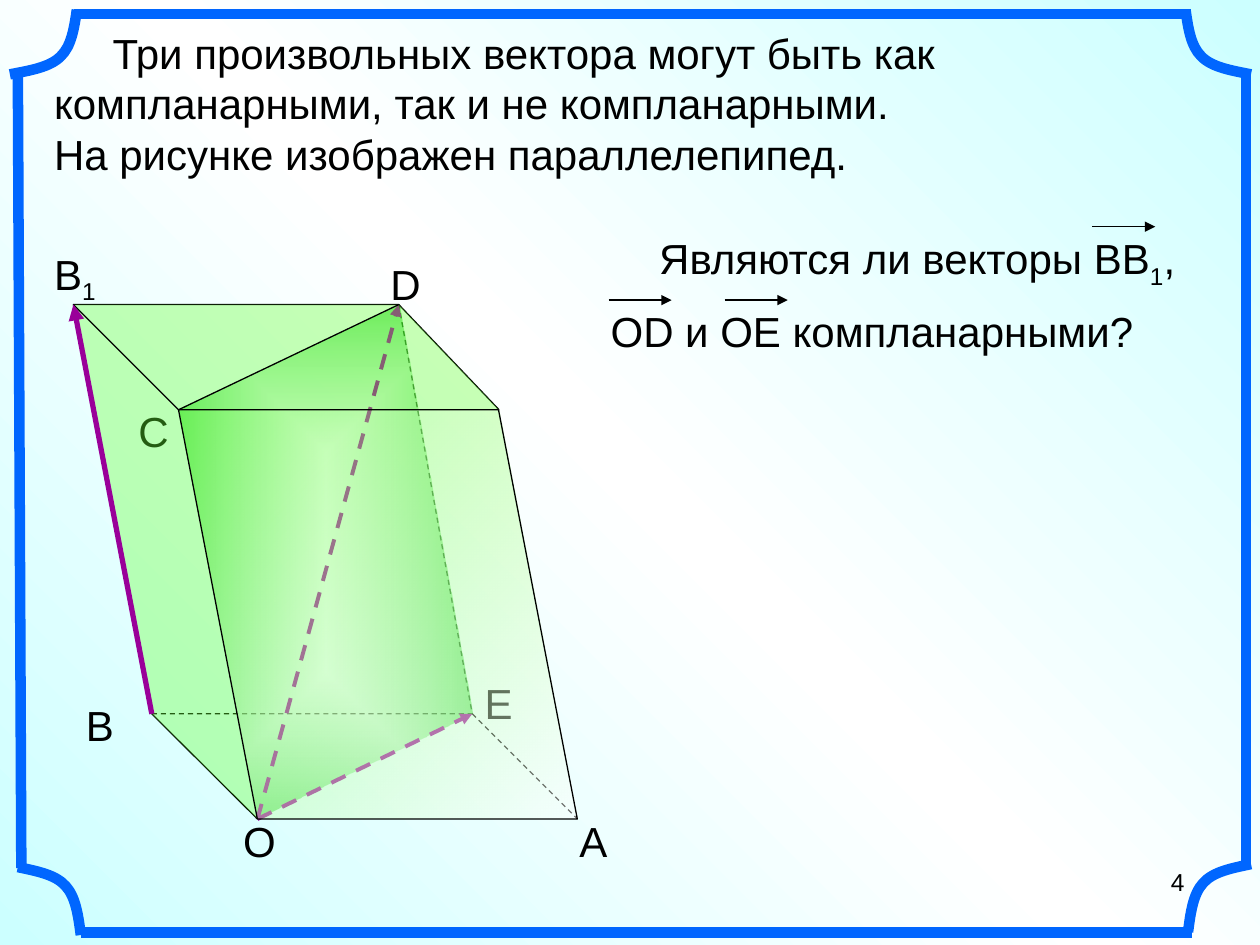
import pptx
import pptx.dml.color
import pptx.enum.dml
import pptx.enum.shapes
import pptx.enum.text
import pptx.oxml
import pptx.oxml.ns
import pptx.util
from pptx.util import Cm

RGBColor = pptx.dml.color.RGBColor
BLACK = RGBColor(0x00, 0x00, 0x00)
BLUE = RGBColor(0x00, 0x66, 0xFF)
PURPLE = RGBColor(0x99, 0x00, 0x99)
WHITE = RGBColor(0xFF, 0xFF, 0xFF)
CYAN = RGBColor(0xCC, 0xFF, 0xFF)
GREEN = RGBColor(0x00, 0xCC, 0x00)
LIME = RGBColor(0x66, 0xFF, 0x33)

FONT = {"name": "Arial", "size": pptx.util.Pt(24)}
SMALL_FONT = {"name": "Arial", "size": pptx.util.Pt(14)}
DASH = {"dash_style": pptx.enum.dml.MSO_LINE.DASH}
EDGE = {"width": pptx.util.Pt(0.75)}
HIDDEN_EDGE = EDGE | DASH
VECTOR = {"width": pptx.util.Pt(3)}
HIDDEN_VECTOR = {"width": pptx.util.Pt(2.25)} | DASH
FRAME = {"width": pptx.util.Pt(6)}

# All positions are in centimetres.
VERTICES = {
    "O": (5.19, 16.51), "A": (11.64, 16.51), "B": (3.06, 14.39), "E": (9.52, 14.39),
    "C": (3.6, 8.26), "F": (10.06, 8.26), "B1": (1.48, 6.14), "D": (8.04, 6.14),
}
# Each paragraph: runs of (text, baseline), then its formatting.
INTRO = [
    ([("Три произвольных вектора могут быть как компланарными, "
       "так и не компланарными.", 0)], {"indent": 1.18}),
    ([("На рисунке изображен параллелепипед.", 0)], {}),
]
QUESTION = [
    ([("Являются ли векторы ВВ", 0), ("1", -25), (",", 0)], {"indent": 1.18}),
    ([("ОD и ОЕ компланарными?", 0)], {"indent": 0.2, "space_before": 9}),
]
VECTOR_SIGNS = [(22.02, 4.57), (12.27, 6.05), (14.61, 6.05)]
SIGN_LENGTH = 1.27

BACK_LABELS = [
    ([("А", 0)], 11.43, 16.31), ([("О", 0)], 4.65, 16.31), ([("Е", 0)], 9.52, 13.54),
    ([("D", 0)], 7.62, 5.08), ([("C", 0)], 2.54, 8.05),
]
FRONT_LABELS = [([("В", 0)], 1.48, 13.97), ([("B", 0), ("1", -25)], 0.84, 4.88)]

FRAME_SIDES = [
    ((1.5, 0.28), (24, 0.28)), ((1.63, 18.8), (24.03, 18.8)),
    ((25.12, 1.5), (25.12, 17.5)), ((0.36, 1.5), (0.43, 17.5)),
]
# Corner curves: start x, start y, signed width, signed height.
FRAME_CORNERS = [
    (0.36, 17.48, 1.27, 1.37), (25.22, 17.42, -1.27, 1.37),
    (25.22, 1.5, -1.32, -1.3), (0.2, 1.5, 1.35, -1.3),
]
CORNER_CURVE = [(0, 0), (0.3, 0.06), (0.6, 0.11), (0.76, 0.28), (0.92, 0.44), (0.96, 0.72), (1, 1)]


def set_attributes(target, values):
    for name, value in values.items():
        setattr(target, name, value)


def set_line(shape, style, color=BLACK):
    shape.line.color.rgb = color
    set_attributes(shape.line, style)


def set_gradient(fill, element, stops, direction):
    """Replace the fill by a gradient of (position, colour, opacity) stops."""
    fill.gradient()
    stops_xml = "".join(
        f'<a:gs pos="{position * 1000}"><a:srgbClr val="{color}">'
        f'<a:alpha val="{opacity * 1000}"/></a:srgbClr></a:gs>'
        for position, color, opacity in stops)
    old = element.xpath(".//a:gradFill")[0]
    old.getparent().replace(old, pptx.oxml.parse_xml(
        f'<a:gradFill {pptx.oxml.ns.nsdecls("a")} rotWithShape="1">'
        f"<a:gsLst>{stops_xml}</a:gsLst>{direction}</a:gradFill>"))


DIAGONAL = '<a:lin ang="18900000" scaled="1"/>'
FROM_CENTRE = ('<a:path path="rect"><a:fillToRect l="50000" t="50000" '
               'r="50000" b="50000"/></a:path>')


def add_line(shapes, start, end, style, color=BLACK, arrow=False):
    connector = shapes.add_connector(
        pptx.enum.shapes.MSO_CONNECTOR.STRAIGHT, *map(Cm, start + end))
    set_line(connector, style, color)
    if arrow:
        connector.line._get_or_add_ln().append(pptx.oxml.parse_xml(
            f'<a:tailEnd {pptx.oxml.ns.nsdecls("a")} type="triangle"/>'))
    connector._element.spPr.append(pptx.oxml.parse_xml(
        f'<a:effectLst {pptx.oxml.ns.nsdecls("a")}/>'))


def add_edge(shapes, start, end, style=EDGE, **options):
    add_line(shapes, VERTICES[start], VERTICES[end], style, **options)


def add_outline(shapes, points, close=False):
    start, *others = [(Cm(x), Cm(y)) for x, y in points]
    builder = shapes.build_freeform(*start, scale=1.0)
    builder.add_line_segments(others, close=close)
    shape = builder.convert_to_shape()
    shape.shadow.inherit = False
    shape.fill.background()
    shape.line.fill.background()
    return shape


def add_vertex_outline(shapes, names, close=False):
    return add_outline(shapes, [VERTICES[name] for name in names.split()], close)


def add_corner(shapes, left, top, width, height):
    """Draw a frame corner, joining each three segments into a Bézier curve."""
    shape = add_outline(shapes, [(left + x * width, top + y * height) for x, y in CORNER_CURVE])
    segments = shape._element.xpath(".//a:lnTo")
    for first in range(0, len(segments), 3):
        curve = pptx.oxml.parse_xml(f'<a:cubicBezTo {pptx.oxml.ns.nsdecls("a")}/>')
        segments[first].addprevious(curve)
        for segment in segments[first:first + 3]:
            curve.append(segment[0])
            segment.getparent().remove(segment)
    set_line(shape, FRAME, BLUE)


def add_text(shapes, box, paragraphs, font=FONT, alignment=None):
    text_frame = shapes.add_textbox(*map(Cm, box)).text_frame
    text_frame.word_wrap = True
    for index, (runs, layout) in enumerate(paragraphs):
        paragraph = text_frame.add_paragraph() if index else text_frame.paragraphs[0]
        paragraph.alignment = alignment
        if "indent" in layout:
            paragraph._p.get_or_add_pPr().set("indent", str(Cm(layout["indent"])))
        if "space_before" in layout:
            paragraph.space_before = pptx.util.Pt(layout["space_before"])
        for text, baseline in runs:
            run = paragraph.add_run()
            run.text = text
            set_attributes(run.font, font)
            run.font.color.rgb = BLACK
            if baseline:
                run._r.get_or_add_rPr().set("baseline", str(baseline * 1000))


def add_labels(shapes, labels):
    for runs, left, top in labels:
        add_text(shapes, (left, top, 1.47, 1.27), [(runs, {})])


def add_frame(shapes):
    for start, end in FRAME_SIDES:
        add_line(shapes, start, end, FRAME, BLUE)
    for corner in FRAME_CORNERS:
        add_corner(shapes, *corner)


def add_front_face(shapes):
    left, top = VERTICES["C"]
    right, bottom = VERTICES["A"]
    face = shapes.add_shape(pptx.enum.shapes.MSO_SHAPE.PARALLELOGRAM,
                            Cm(left), Cm(top), Cm(right - left), Cm(bottom - top))
    face.adjustments[0] = (VERTICES["O"][0] - left) / (right - left)
    face._element.spPr.xfrm.set("flipH", "1")
    face.shadow.inherit = False
    set_gradient(face.fill, face._element, [(0, WHITE, 46), (100, LIME, 45)], DIAGONAL)
    set_line(face, EDGE)


def add_green_surface(shapes):
    surface = add_vertex_outline(shapes, "O B B1 D F C", close=True)
    surface.fill.solid()
    surface.fill.fore_color.rgb = LIME
    color = surface._element.xpath(".//a:solidFill/a:srgbClr")[0]
    color.append(pptx.oxml.parse_xml(
        f'<a:alpha {pptx.oxml.ns.nsdecls("a")} val="36000"/>'))


def main():
    presentation = pptx.Presentation()
    presentation.slide_width, presentation.slide_height = Cm(25.4), Cm(19.05)
    slide = presentation.slides.add_slide(presentation.slide_layouts[6])
    shapes = slide.shapes
    set_gradient(slide.background.fill, slide._element,
                 [(0, CYAN, 100), (50, WHITE, 100), (100, CYAN, 100)], DIAGONAL)

    set_line(add_vertex_outline(shapes, "B E D"), HIDDEN_EDGE)
    section = add_vertex_outline(shapes, "O E D C")
    set_gradient(section.fill, section._element, [(0, WHITE, 40), (100, GREEN, 54)], FROM_CENTRE)
    add_text(shapes, (0.84, 0.43, 23.93, 3.3), INTRO)
    add_frame(shapes)

    set_line(add_vertex_outline(shapes, "D B1 B"), EDGE)
    add_edge(shapes, "E", "A", HIDDEN_EDGE)
    add_edge(shapes, "D", "F")
    for end in "DE":
        add_edge(shapes, "O", end, HIDDEN_VECTOR, color=PURPLE, arrow=True)
    add_edge(shapes, "B", "O")
    add_labels(shapes, BACK_LABELS)
    add_green_surface(shapes)
    add_front_face(shapes)

    add_text(shapes, (11.86, 4.57, 12.9, 2.62), QUESTION)
    for left, top in VECTOR_SIGNS:
        add_line(shapes, (left, top), (left + SIGN_LENGTH, top), EDGE, arrow=True)
    add_edge(shapes, "B1", "C")
    add_labels(shapes, FRONT_LABELS)
    add_edge(shapes, "B", "B1", VECTOR, color=PURPLE, arrow=True)
    add_edge(shapes, "D", "C")
    add_text(shapes, (18.2, 17.35, 5.93, 1.32), [([("4", 0)], {})], SMALL_FONT,
             pptx.enum.text.PP_ALIGN.RIGHT)
    presentation.save("out.pptx")


if __name__ == "__main__":
    main()
